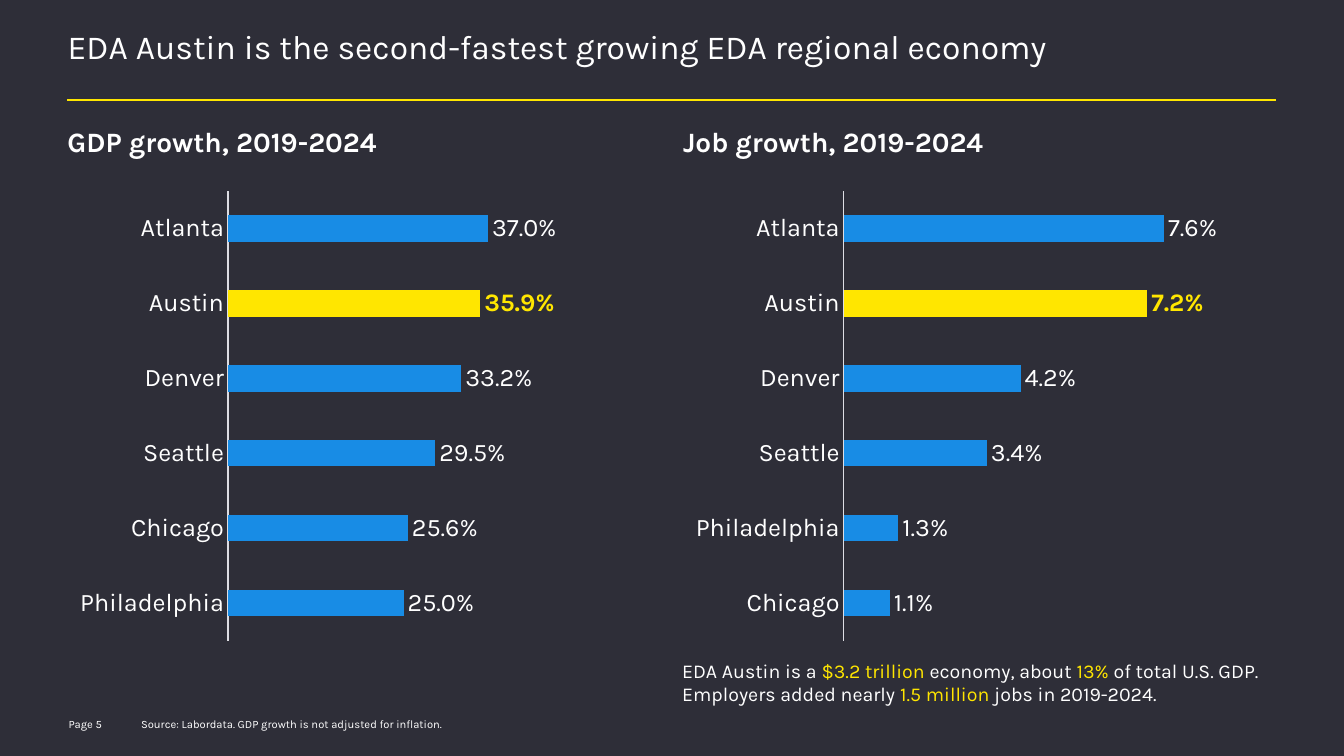
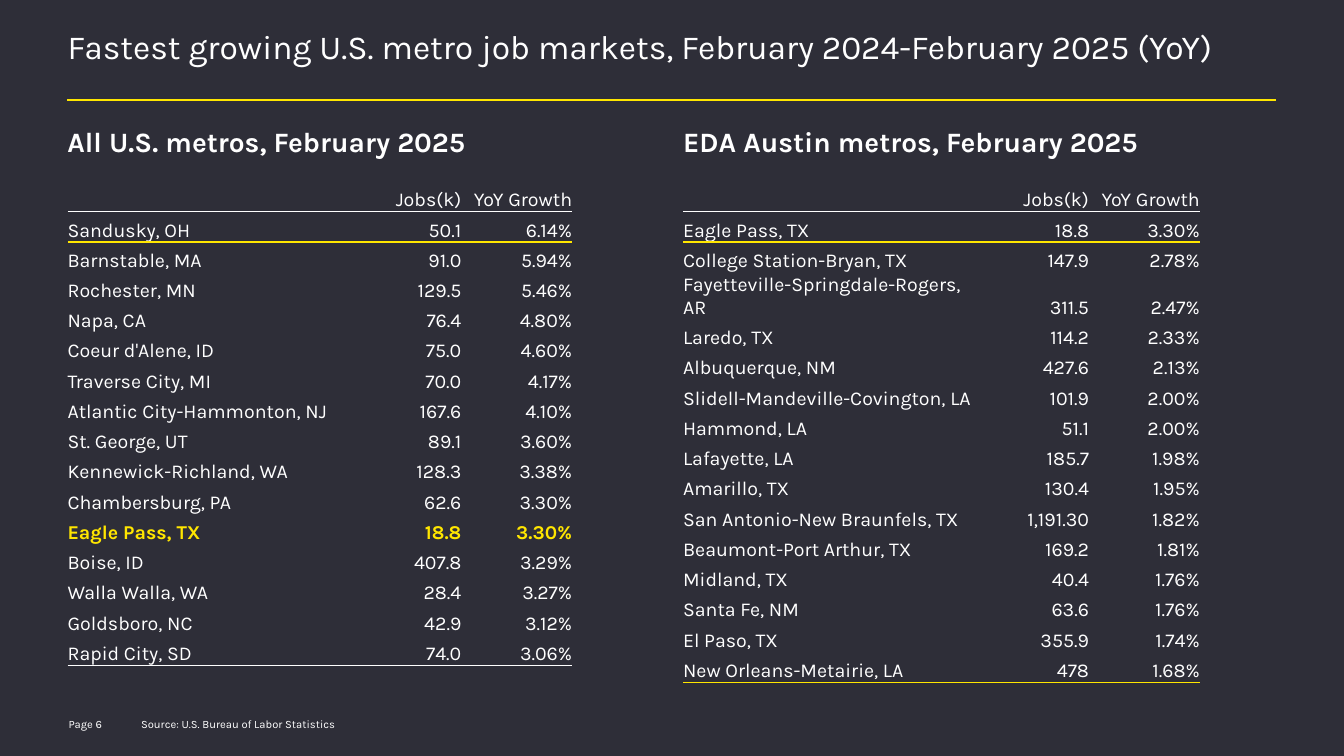
from lxml import etree
from pptx import Presentation
from pptx.chart.data import CategoryChartData
from pptx.dml.color import RGBColor
from pptx.enum import chart as ch, shapes, text
from pptx.oxml import parse_xml
from pptx.oxml.ns import nsdecls, qn
from pptx.util import Inches, Pt

BACKGROUND = RGBColor(0x2E, 0x2E, 0x38)
WHITE = RGBColor(0xFF, 0xFF, 0xFF)
YELLOW = RGBColor(0xFF, 0xE6, 0x00)
BLUE = RGBColor(0x18, 0x8C, 0xE5)
AXIS_GREY = RGBColor(0xDD, 0xDD, 0xE3)
FONT = "Karla"
COLUMN_LEFTS = (0.67, 6.78)
COLUMN_WIDTH = 5.9
CONTENT_TOP = 1.8
NO_TABLE_STYLE = "{2D5ABB26-0587-4C30-8999-92F81FD0307C}"


def style_font(font, size, color=WHITE, bold=False):
    for name, value in {"name": FONT, "size": Pt(size), "bold": bold}.items():
        setattr(font, name, value)
    font.color.rgb = color


def add_text(s, box, runs, size, bold=False, anchor=text.MSO_ANCHOR.TOP):
    """Add a text box of (text, colour) runs and return its paragraph."""
    tf = s.shapes.add_textbox(*map(Inches, box)).text_frame
    margins = dict.fromkeys(("margin_left", "margin_top", "margin_right", "margin_bottom"), 0)
    for name, value in {**margins, "word_wrap": True, "vertical_anchor": anchor}.items():
        setattr(tf, name, value)
    p = tf.paragraphs[0]
    for words, color in runs:
        r = p.add_run()
        r.text = words
        style_font(r.font, size, color, bold)
    return p


prs = Presentation()
prs.slide_width, prs.slide_height = Inches(13.34), Inches(7.5)
fill = prs.slide_master.background.fill
fill.solid()
fill.fore_color.rgb = BACKGROUND

# Title, rule, column headings and footer of every slide
pages = [
    (5, "EDA Austin is the second-fastest growing EDA regional economy",
     ("GDP growth, 2019-2024", "Job growth, 2019-2024"),
     "Source: Labordata. GDP growth is not adjusted for inflation."),
    (6, "Fastest growing U.S. metro job markets, February 2024-February 2025 (YoY)",
     ("All U.S. metros, February 2025", "EDA Austin metros, February 2025"),
     "Source: U.S. Bureau of Labor Statistics"),
]
for number, title, headings, source in pages:
    s = prs.slides.add_slide(prs.slide_layouts[6])
    rule = s.shapes.add_connector(shapes.MSO_CONNECTOR.STRAIGHT, Inches(0.67), Inches(0.99),
                                  Inches(12.67), Inches(0.99))
    rule.line.color.rgb = YELLOW
    rule.line.width = Pt(1.5)
    etree.SubElement(rule._element.spPr, qn("a:effectLst"))
    p = add_text(s, (0.67, 0.32, 12.01, 0.65), [(title, WHITE)], 24)
    p.line_spacing = 0.85
    for left, heading in zip(COLUMN_LEFTS, headings):
        p = add_text(s, (left, 1.24, COLUMN_WIDTH, 0.5), [(heading, WHITE)], 20, bold=True)
        p.space_before = Pt(5)
    for left, width, words in ((0.68, 0.72, f"Page {number}"), (1.4, 5.48, source)):
        add_text(s, (left, 7.08, width, 0.2), [(words, WHITE)], 8,
                 anchor=text.MSO_ANCHOR.MIDDLE)

chart_slide, table_slide = prs.slides

# Growth bar charts, listed from the bottom bar up
growth = [
    (0.6, {"Philadelphia": 0.25, "Chicago": 0.256, "Seattle": 0.295,
           "Denver": 0.332, "Austin": 0.359, "Atlanta": 0.37}),
    (0.1, {"Chicago": 0.011, "Philadelphia": 0.013, "Seattle": 0.034,
           "Denver": 0.042, "Austin": 0.072, "Atlanta": 0.076}),
]
for left, (maximum, rates) in zip(COLUMN_LEFTS, growth):
    data = CategoryChartData(number_format="0.0%")
    data.categories = list(rates)
    data.add_series("Series 1", list(rates.values()))
    chart = chart_slide.shapes.add_chart(
        ch.XL_CHART_TYPE.BAR_CLUSTERED, Inches(left), Inches(CONTENT_TOP),
        Inches(COLUMN_WIDTH), Inches(4.65), data).chart
    chart.has_legend = chart.has_title = False
    style_font(chart.font, 18)

    cities = chart.category_axis
    cities.major_tick_mark = cities.minor_tick_mark = ch.XL_TICK_MARK.NONE
    cities.format.line.color.rgb = AXIS_GREY
    cities.format.line.width = Pt(0.75)
    style_font(cities.tick_labels.font, 18)
    scale = chart.value_axis
    for name, value in {"minimum_scale": 0, "maximum_scale": maximum,
                        "has_major_gridlines": False, "visible": False}.items():
        setattr(scale, name, value)

    plot = chart.plots[0]
    plot.gap_width = 182
    plot.vary_by_categories = False

    bars = plot.series[0]
    austin = bars.points[list(rates).index("Austin")]
    for bar, color in ((bars, BLUE), (austin, YELLOW)):
        bar.format.fill.solid()
        bar.format.fill.fore_color.rgb = color
    labels = bars.data_labels
    for name, value in {"show_value": True, "number_format": "0.0%",
                        "number_format_is_linked": False,
                        "position": ch.XL_LABEL_POSITION.OUTSIDE_END}.items():
        setattr(labels, name, value)
    style_font(labels.font, 18)
    style_font(austin.data_label.font, 18, YELLOW, bold=True)
    austin.data_label.position = ch.XL_LABEL_POSITION.OUTSIDE_END

    # Fixed plot area, so that both axes start at the same place
    area = chart._chartSpace.chart.plotArea
    for old in area.findall(qn("c:layout")):
        area.remove(old)
    area.insert(0, parse_xml(
        f'<c:layout {nsdecls("c")}><c:manualLayout><c:layoutTarget val="inner"/>'
        '<c:xMode val="edge"/><c:yMode val="edge"/><c:x val="0.27"/><c:y val="0.02"/>'
        '<c:w val="0.71"/><c:h val="0.96"/></c:manualLayout></c:layout>'))

add_text(chart_slide, (6.77, 6.49, COLUMN_WIDTH, 0.56), [
    ("EDA Austin is a ", WHITE), ("$3.2 trillion ", YELLOW), ("economy, about ", WHITE),
    ("13%", YELLOW), (" of total U.S. GDP. Employers added nearly ", WHITE),
    ("1.5 million", YELLOW), (" jobs in 2019-2024.", WHITE),
], 14, anchor=text.MSO_ANCHOR.MIDDLE)

# Job market tables
header = ("", "Jobs(k)", "YoY Growth")
us_metros = [
    ("Sandusky, OH", "50.1", "6.14%"),
    ("Barnstable, MA", "91.0", "5.94%"),
    ("Rochester, MN", "129.5", "5.46%"),
    ("Napa, CA", "76.4", "4.80%"),
    ("Coeur d'Alene, ID", "75.0", "4.60%"),
    ("Traverse City, MI", "70.0", "4.17%"),
    ("Atlantic City-Hammonton, NJ", "167.6", "4.10%"),
    ("St. George, UT", "89.1", "3.60%"),
    ("Kennewick-Richland, WA", "128.3", "3.38%"),
    ("Chambersburg, PA", "62.6", "3.30%"),
    ("Eagle Pass, TX", "18.8", "3.30%"),
    ("Boise, ID", "407.8", "3.29%"),
    ("Walla Walla, WA", "28.4", "3.27%"),
    ("Goldsboro, NC", "42.9", "3.12%"),
    ("Rapid City, SD", "74.0", "3.06%"),
]
austin_metros = [
    ("Eagle Pass, TX", "18.8", "3.30%"),
    ("College Station-Bryan, TX", "147.9", "2.78%"),
    ("Fayetteville-Springdale-Rogers, AR", "311.5", "2.47%"),
    ("Laredo, TX", "114.2", "2.33%"),
    ("Albuquerque, NM", "427.6", "2.13%"),
    ("Slidell-Mandeville-Covington, LA", "101.9", "2.00%"),
    ("Hammond, LA", "51.1", "2.00%"),
    ("Lafayette, LA", "185.7", "1.98%"),
    ("Amarillo, TX", "130.4", "1.95%"),
    ("San Antonio-New Braunfels, TX", "1,191.30", "1.82%"),
    ("Beaumont-Port Arthur, TX", "169.2", "1.81%"),
    ("Midland, TX", "40.4", "1.76%"),
    ("Santa Fe, NM", "63.6", "1.76%"),
    ("El Paso, TX", "355.9", "1.74%"),
    ("New Orleans-Metairie, LA", "478", "1.68%"),
]
tables = [(us_metros, 2.81, "Eagle Pass, TX", WHITE), (austin_metros, 2.93, None, YELLOW)]
for left, (metros, name_width, highlight, last_color) in zip(COLUMN_LEFTS, tables):
    rows = [header, *metros]
    widths = (name_width, 1.1, 1.1)
    table = table_slide.shapes.add_table(
        len(rows), len(widths), Inches(left), Inches(CONTENT_TOP),
        Inches(sum(widths)), Inches(0.3 * len(rows))).table
    table.first_row = table.horz_banding = False
    table._tbl.tblPr.find(qn("a:tableStyleId")).text = NO_TABLE_STYLE
    for column, width in zip(table.columns, widths):
        column.width = Inches(width)
    underlines = {0: (WHITE, 0.75), 1: (YELLOW, 1.5), len(rows) - 1: (last_color, 0.75)}
    for i, row in enumerate(rows):
        table.rows[i].height = Inches(0.3)
        marked = row[0] == highlight
        for j, words in enumerate(row):
            cell = table.cell(i, j)
            cell.margin_left = cell.margin_top = cell.margin_right = cell.margin_bottom = 0
            cell.vertical_anchor = text.MSO_ANCHOR.BOTTOM
            cell.fill.background()
            p = cell.text_frame.paragraphs[0]
            p.alignment = text.PP_ALIGN.RIGHT if j else text.PP_ALIGN.LEFT
            if words:
                r = p.add_run()
                r.text = words
                style_font(r.font, 14, YELLOW if marked else WHITE, marked)
            else:
                p._p.get_or_add_endParaRPr().set("sz", "1400")
            if i in underlines:
                color, weight = underlines[i]
                cell._tc.get_or_add_tcPr().insert(0, parse_xml(
                    f'<a:lnB {nsdecls("a")} w="{Pt(weight)}"><a:solidFill>'
                    f'<a:srgbClr val="{color}"/></a:solidFill></a:lnB>'))

prs.save("out.pptx")
